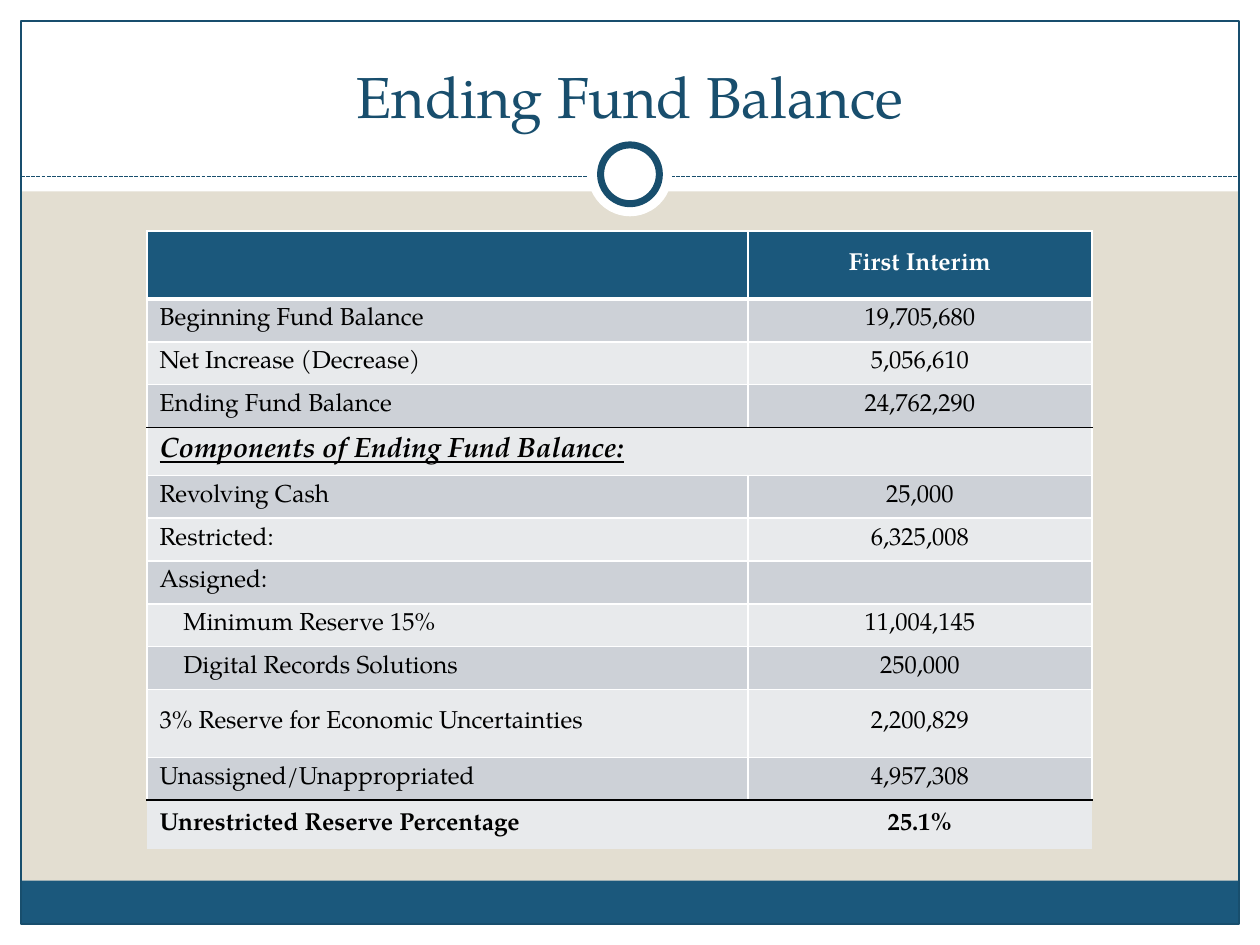
import pptx
import pptx.dml.color
import pptx.enum.dml
import pptx.enum.shapes
import pptx.enum.text
import pptx.oxml
import pptx.oxml.ns
import pptx.util

COLS, ROWS = 60, 45
FONT = "TeX Gyre Pagella"
NAVY, BLUE, WHITE, BLACK, SAND = "184E6D", "1B587C", "FFFFFF", "000000", "E3DED1"
BANDS = ("CDD1D7", "E8EAEC")
SHAPE = pptx.enum.shapes.MSO_SHAPE
ALIGN = pptx.enum.text.PP_ALIGN
ANCHOR = pptx.enum.text.MSO_ANCHOR

HEADER = ("", "First Interim")
LINES = [
    ("Beginning Fund Balance", "19,705,680"),
    ("Net Increase (Decrease)", "5,056,610"),
    ("Ending Fund Balance", "24,762,290"),
    ("Components of Ending Fund Balance:", ""),
    ("Revolving Cash", "25,000"),
    ("Restricted:", "6,325,008"),
    ("Assigned:", ""),
    ("Minimum Reserve 15%", "11,004,145"),
    ("Digital Records Solutions", "250,000"),
    ("3% Reserve for Economic Uncertainties", "2,200,829"),
    ("Unassigned/Unappropriated", "4,957,308"),
    ("Unrestricted Reserve Percentage", "25.1%"),
]
SECTION, LAST = 4, len(LINES)
INDENTED, RULED = (8, 9), (3, 11)
TALL = {0: 3.24, SECTION: 2.28, 10: 3.24, LAST: 2.34}

prs = pptx.Presentation()
prs.slide_width = pptx.util.Inches(10)
prs.slide_height = pptx.util.Inches(7.5)


def grid(*units):
    return [round(u * prs.slide_width / COLS) for u in units]


def rgb(value):
    return pptx.dml.color.RGBColor.from_string(value)


def set_fill(fill, color):
    fill.solid()
    fill.fore_color.rgb = rgb(color)


def set_line(line, color, width):
    set_fill(line.fill, color)
    line.width = pptx.util.Pt(width)


def write(tf, text, color, align=ALIGN.LEFT, **values):
    p = tf.paragraphs[0]
    p.alignment = align
    r = p.add_run()
    r.text = text
    for name, value in {"name": FONT, **values}.items():
        setattr(r.font, name, value)
    r.font.color.rgb = rgb(color)


def add_shape(s, kind, box, fill=None, line=None):
    sp = s.shapes.add_shape(kind, *grid(*box))
    sp.shadow.inherit = False
    if fill:
        set_fill(sp.fill, fill)
    else:
        sp.fill.background()
    if line:
        set_line(sp.line, *line)
    else:
        sp.line.fill.background()


def add_frame(s, box):
    x, y, w, h = box
    right, bottom = x + w, y + h
    for band in ((x, bottom - 1, w, 1), (x, y, w, 9.12),
                 (x, y, 1, h), (right - 1, y, 1, h)):
        add_shape(s, SHAPE.RECTANGLE, band, WHITE)
    add_shape(s, SHAPE.RECTANGLE, (x + 1, bottom - 3.06, w - 2, 2.06), BLUE)
    add_shape(s, SHAPE.RECTANGLE, (x + 1, y + 1, w - 2, h - 2), line=(NAVY, 0.75))

    rule = y + 8.4
    cxn = s.shapes.add_connector(pptx.enum.shapes.MSO_CONNECTOR.STRAIGHT,
                                 *grid(x + 1, rule, right - 1, rule))
    set_line(cxn.line, NAVY, 0.75)
    cxn.line.dash_style = pptx.enum.dml.MSO_LINE.SQUARE_DOT
    pptx.oxml.ns.qn("a:effectLst")
    cxn.element.spPr.append(pptx.oxml.parse_xml(
        f'<a:effectLst {pptx.oxml.ns.nsdecls("a")}/>'))

    cx, cy = x + w / 2, y + 8.3
    for size, fill, line in ((4, WHITE, None), (2.8, WHITE, (NAVY, 4))):
        add_shape(s, SHAPE.OVAL, (cx - size / 2, cy - size / 2, size, size), fill, line)


def add_title(s, box):
    sp = s.shapes.title
    sp.element.getparent().append(sp.element)
    for name, value in zip(("left", "top", "width", "height"), grid(*box)):
        setattr(sp, name, value)
    tf = sp.text_frame
    tf.word_wrap = True
    tf.auto_size = pptx.enum.text.MSO_AUTO_SIZE.NONE
    tf.vertical_anchor = ANCHOR.BOTTOM
    write(tf, "Ending Fund Balance", NAVY, ALIGN.CENTER, size=pptx.util.Pt(33))


def set_borders(cell, borders):
    tc_pr = cell._tc.get_or_add_tcPr()
    for i, side in enumerate("LRTB"):
        color, width = borders[side]
        paint = (f'<a:solidFill><a:srgbClr val="{color}"/></a:solidFill>'
                 if color else "<a:noFill/>")
        tc_pr.insert(i, pptx.oxml.parse_xml(
            f'<a:ln{side} {pptx.oxml.ns.nsdecls("a")} w="{pptx.util.Pt(width)}">'
            f'{paint}</a:ln{side}>'))


def row_borders(row):
    borders = dict.fromkeys("LRTB", (WHITE, 1))
    if row == LAST:
        borders = dict.fromkeys("LRTB", (None, 1))
    if row == 0:
        borders["B"] = (WHITE, 3)
    if row == 1:
        borders["T"] = (WHITE, 3)
    if row in RULED:
        borders["B"] = (BLACK, 1)
    if row - 1 in RULED:
        borders["T"] = (BLACK, 1)
    return borders


def add_balance_table(s, box):
    table = s.shapes.add_table(len(LINES) + 1, 2, *grid(*box)).table
    for col, share in zip(table.columns, (0.636, 0.364)):
        col.width = grid(box[2] * share)[0]
    for row, texts in enumerate([HEADER] + LINES):
        table.rows[row].height = grid(TALL.get(row, 2.04))[0]
        values = {"size": pptx.util.Pt(14), "bold": row in (0, SECTION, LAST)}
        if row == SECTION:
            values.update(size=pptx.util.Pt(16), italic=True, underline=True)
        for col, text in enumerate(texts):
            cell = table.cell(row, col)
            cell.vertical_anchor = ANCHOR.MIDDLE
            set_fill(cell.fill, BANDS[(row - 1) % 2] if row else BLUE)
            set_borders(cell, row_borders(row))
            if col == 0 and row in INDENTED:
                cell.margin_left = grid(1.74)[0]
            if text:
                write(cell.text_frame, text, BLACK if row else WHITE,
                      ALIGN.CENTER if col else ALIGN.LEFT, **values)
            else:
                cell.text_frame.paragraphs[0].font.size = values["size"]
    table.cell(SECTION, 0).merge(table.cell(SECTION, 1))


def main():
    s = prs.slides.add_slide(prs.slide_layouts[5])
    set_fill(s.background.fill, SAND)
    add_frame(s, (0, 0, COLS, ROWS))
    add_title(s, (2, 1.5, COLS - 4, 5))
    add_balance_table(s, (7, 11, 45, 29.5))
    prs.save("out.pptx")


if __name__ == "__main__":
    main()
